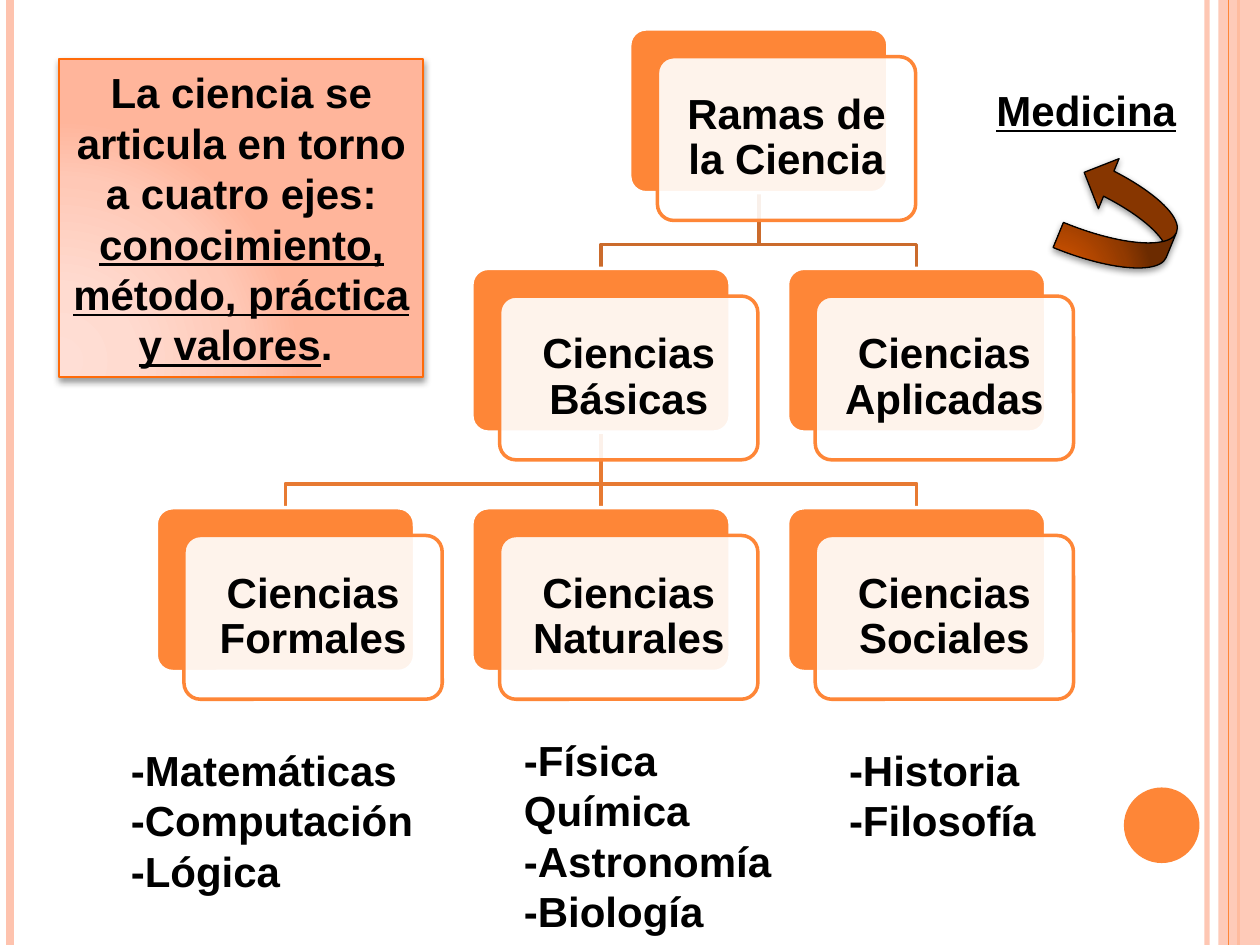
"""Builds the slide on the branches of science."""
from lxml import etree
from pptx import Presentation
from pptx.dml.color import RGBColor
from pptx.enum import shapes, text
from pptx.oxml import ns
from pptx.util import Inches, Pt

ORANGE = RGBColor(0xFE, 0x86, 0x37)
PEACH = RGBColor(0xFE, 0xC3, 0xAE)
BRANCH_TOP = RGBColor(0xCB, 0x6B, 0x2C)
BRANCH_LOW = RGBColor(0xE7, 0x7A, 0x32)
BOX_LINE = RGBColor(0xFF, 0x6B, 0x0A)
WHITE = RGBColor(0xFF, 0xFF, 0xFF)
BLACK = RGBColor(0, 0, 0)
BOX_STOPS = [(0, "FFDED5"), (30, "FFDBD0"), (75, "FFC8B6"), (100, "FFB59B")]
ARROW_STOPS = [(0, "FD6400"), (30, "F46100"), (75, "B74900"), (100, "873600")]

CARD_W, CARD_H, OFFSET = 2.05, 1.3, 0.22
LEFT, TOP, COL_STEP, ROW_STEP = 1.24, 0.23, 2.505, 1.9
ELBOW = 0.41

CARDS = [
    ("Ramas de la Ciencia", 1.5, 0),
    ("Ciencias Básicas", 1, 1),
    ("Ciencias Formales", 0, 2),
    ("Ciencias Naturales", 1, 2),
    ("Ciencias Sociales", 2, 2),
    ("Ciencias Aplicadas", 2, 1),
]
BRANCHES = [
    (1.5, 0, 2, BRANCH_TOP),
    (1, 1, 2, BRANCH_LOW),
    (1, 1, 1, BRANCH_LOW),
    (1, 1, 0, BRANCH_LOW),
    (1.5, 0, 1, BRANCH_TOP),
]
NOTES = [
    (["-Matemáticas", "-Computación", "-Lógica"], 0.94, 5.86, 2.46, 1.31),
    (["-Física", "Química", "-Astronomía", "-Biología"], 4.06, 5.78, 5, 1.72),
    (["-Historia", "-Filosofía"], 6.64, 5.86, 1.7, 0.91),
]


class Deck:
    """Holds the style and the current slide."""

    def __init__(self, prs, font="Arial", size=24):
        self.s = prs.slides.add_slide(prs.slide_layouts[6])
        self.font, self.size = font, Pt(size)

    def alpha(self, fmt, percent):
        """Makes a solid fill partly transparent."""
        clr = fmt._xPr.find(".//" + ns.qn("a:srgbClr"))
        etree.SubElement(clr, ns.qn("a:alpha"), val=str(percent * 1000))

    def line(self, x1, y1, x2, y2, color, width):
        """Draws a straight line without shadow."""
        ln = self.s.shapes.add_connector(
            shapes.MSO_CONNECTOR.STRAIGHT, Inches(x1), Inches(y1), Inches(x2), Inches(y2))
        ln.line.color.rgb, ln.line.width = color, Pt(width)
        etree.SubElement(ln._element.spPr, ns.qn("a:effectLst"))
        return ln

    def shape(self, kind, x, y, w, h, fill=None, line=None, width=1):
        """Draws a preset shape."""
        sp = self.s.shapes.add_shape(kind, Inches(x), Inches(y), Inches(w), Inches(h))
        sp.shadow.inherit = False
        if fill is not None:
            sp.fill.solid()
            sp.fill.fore_color.rgb = fill
        if line is None:
            sp.line.fill.background()
        else:
            sp.line.color.rgb, sp.line.width = line, Pt(width)
        return sp

    def glossy(self, sp, stops, opacity, distance):
        """Gives a shape a radial gradient and a soft shadow."""
        sp.fill.gradient()
        grad = sp._element.spPr.find(ns.qn("a:gradFill"))
        for child in list(grad):
            grad.remove(child)
        gs_list = etree.SubElement(grad, ns.qn("a:gsLst"))
        for pos, color in stops:
            gs = etree.SubElement(gs_list, ns.qn("a:gs"), pos=str(pos * 1000))
            etree.SubElement(gs, ns.qn("a:srgbClr"), val=color)
        circle = etree.SubElement(grad, ns.qn("a:path"), {"path": "circle"})
        etree.SubElement(circle, ns.qn("a:fillToRect"),
                         l="5000", t="100000", r="120000", b="10000")
        effects = sp._element.spPr.find(ns.qn("a:effectLst"))
        shadow = etree.SubElement(effects, ns.qn("a:outerShdw"), blurRad=str(Pt(4)),
                                  dist=str(Pt(distance)), dir="5400000", rotWithShape="0")
        clr = etree.SubElement(shadow, ns.qn("a:srgbClr"), val="000000")
        etree.SubElement(clr, ns.qn("a:alpha"), val=str(opacity * 1000))

    def style(self, r, underline=False):
        """Formats one run."""
        r.font.name, r.font.size, r.font.bold = self.font, self.size, True
        r.font.color.rgb = BLACK
        r.font.underline = underline

    def note(self, lines, x, y, w, h, wrap=False, underline=False):
        """Adds a text box with one paragraph per line."""
        tf = self.s.shapes.add_textbox(Inches(x), Inches(y), Inches(w), Inches(h)).text_frame
        tf.word_wrap = wrap
        tf.text = "\n".join(lines)
        for p in tf.paragraphs:
            self.style(p.runs[0], underline)

    def card(self, label, col, row):
        """Draws a labelled card over its backing."""
        kind = shapes.MSO_SHAPE.ROUNDED_RECTANGLE
        x, y = LEFT + col * COL_STEP, TOP + row * ROW_STEP
        back = self.shape(kind, x, y, CARD_W, CARD_H, ORANGE, WHITE, 2)
        front = self.shape(kind, x + OFFSET, y + OFFSET, CARD_W, CARD_H, WHITE, ORANGE, 2)
        back.adjustments[0] = front.adjustments[0] = 0.1
        self.alpha(front.fill, 90)
        tf = front.text_frame
        tf.margin_left = tf.margin_right = tf.margin_top = tf.margin_bottom = Inches(0.12)
        tf.word_wrap, tf.vertical_anchor = True, text.MSO_ANCHOR.MIDDLE
        tf.text = label
        p = tf.paragraphs[0]
        p.alignment, p.line_spacing = text.PP_ALIGN.CENTER, 0.9
        self.style(p.runs[0])

    def branch(self, col, row, child, color):
        """Joins a card to a card in the next row."""
        x1, x2 = (LEFT + c * COL_STEP + CARD_W / 2 for c in (col, child))
        y1, y2 = TOP + row * ROW_STEP + CARD_H, TOP + (row + 1) * ROW_STEP
        if col == child:
            self.line(x1, y1, x2, y2, color, 2)
            return
        points = [(x1, y1 + ELBOW), (x2, y1 + ELBOW), (x2, y2)]
        fb = self.s.shapes.build_freeform(Inches(x1), Inches(y1))
        fb.add_line_segments([(Inches(x), Inches(y)) for x, y in points], close=False)
        sp = fb.convert_to_shape()
        sp.shadow.inherit = False
        sp.fill.background()
        sp.line.color.rgb, sp.line.width = color, Pt(2)

    def frame(self):
        """Draws the border stripes and the dot."""
        pale = self.line(9.58, 0, 9.58, 7.5, PEACH, 3)
        self.alpha(pale.line.fill, 93)
        self.line(0.08, 0, 0.08, 7.5, PEACH, 4.5)
        self.line(9.83, 0, 9.83, 7.5, ORANGE, 1.5)
        band = self.shape(shapes.MSO_SHAPE.RECTANGLE, 9.67, 0, 0.33, 7.5, PEACH)
        self.alpha(band.fill, 87)
        self.line(9.75, 0, 9.75, 7.5, ORANGE, 0.75)
        self.shape(shapes.MSO_SHAPE.OVAL, 8.92, 6.25, 0.6, 0.6, ORANGE)

    def arrow(self):
        """Draws the curved arrow to the example."""
        sp = self.shape(shapes.MSO_SHAPE.CURVED_UP_ARROW, 8.49, 1.3, 0.86, 0.86,
                        line=BLACK, width=0.75)
        sp.rotation = 292.4
        self.glossy(sp, ARROW_STOPS, 42, 1.6)

    def summary(self, parts):
        """Draws the shaded box with (text, underline) parts."""
        sp = self.shape(shapes.MSO_SHAPE.RECTANGLE, 0.47, 0.47, 2.89, 2.52, line=BOX_LINE)
        self.glossy(sp, BOX_STOPS, 40, 2)
        sp.text_frame.word_wrap = True
        p = sp.text_frame.paragraphs[0]
        p.alignment = text.PP_ALIGN.CENTER
        for words, underline in parts:
            r = p.add_run()
            r.text = words
            self.style(r, underline)


def main():
    """Builds and saves the slide."""
    prs = Presentation()
    prs.slide_width, prs.slide_height = Inches(10), Inches(7.5)
    deck = Deck(prs)
    deck.frame()
    for branch in BRANCHES:
        deck.branch(*branch)
    for card in CARDS:
        deck.card(*card)
    for lines, *box in NOTES:
        deck.note(lines, *box, wrap=box[2] == 5)
    deck.note(["Medicina"], 7.81, 0.62, 1.64, 0.5, underline=True)
    deck.arrow()
    deck.summary([
        ("La ciencia se articula en torno a cuatro ejes: ", False),
        ("conocimiento, método, práctica y valores", True),
        (". ", False),
    ])
    prs.save("out.pptx")


if __name__ == "__main__":
    main()
